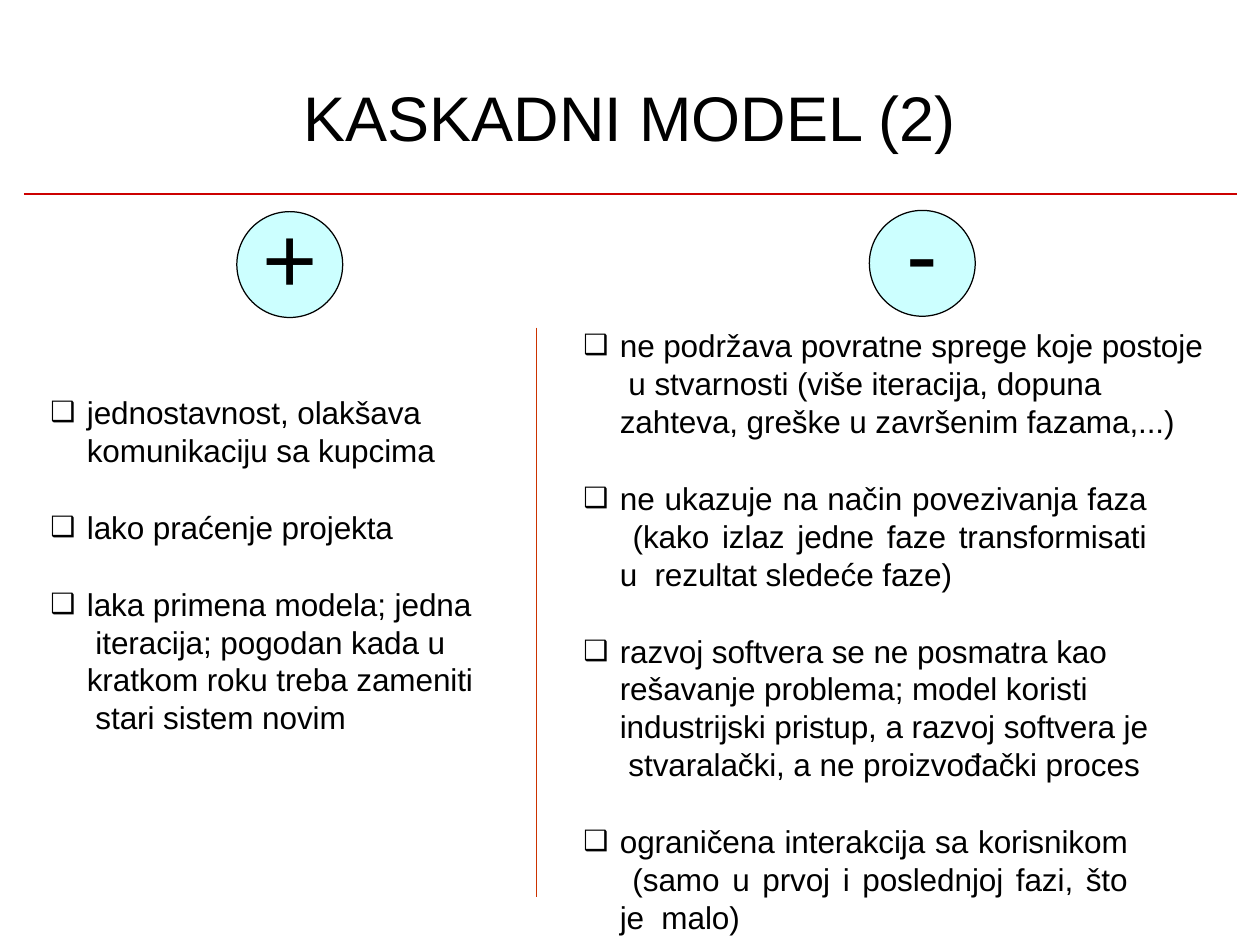
import pptx
import pptx.dml.color
import pptx.enum.shapes
import pptx.enum.text
import pptx.oxml
import pptx.oxml.ns
import pptx.util
from lxml import etree

Inches = pptx.util.Inches
Pt = pptx.util.Pt
ALIGN = pptx.enum.text.PP_ALIGN
ANCHOR = pptx.enum.text.MSO_ANCHOR

COLORS = {"text": "000000", "circle": "CCFFFF", "rule": "CC0000", "divider": "CC3300"}
FONT = "Arial"
CIRCLE_SIZE = 0.84
HANG = 0.29
TEXT_INDENT = 0.31

# Each item: wording, alignment, right margin in inches
ADVANTAGES = [
    ("jednostavnost, olakšava  komunikaciju sa kupcima", ALIGN.LEFT, 0),
    ("lako praćenje projekta", ALIGN.LEFT, 0),
    ("laka primena modela; jedna  iteracija; pogodan kada u  "
     "kratkom roku treba zameniti  stari sistem novim", ALIGN.LEFT, 0),
]
DRAWBACKS = [
    ("ne podržava povratne sprege koje postoje  u stvarnosti (više iteracija, "
     "dopuna  zahteva, greške u završenim fazama,...)", ALIGN.LEFT, 0),
    ("ne ukazuje na način povezivanja faza  (kako izlaz jedne faze "
     "transformisati u  rezultat sledeće faze)", ALIGN.JUSTIFY, 0.48),
    ("razvoj softvera se ne posmatra kao  rešavanje problema; model koristi  "
     "industrijski pristup, a razvoj softvera je  stvaralački, "
     "a ne proizvođački proces", ALIGN.LEFT, 0.44),
    ("ograničena interakcija sa korisnikom  (samo u prvoj i poslednjoj fazi, "
     "što je  malo)", ALIGN.JUSTIFY, 0.63),
]


def color(name):
    return pptx.dml.color.RGBColor.from_string(COLORS[name])


def place(shape, left, top, width, height):
    box = {"left": left, "top": top, "width": width, "height": height}
    for side, value in box.items():
        setattr(shape, side, Inches(value))


def set_frame(frame, anchor, bottom=0):
    settings = {"margin_left": 0, "margin_top": 0, "margin_right": 0,
                "margin_bottom": Inches(bottom), "word_wrap": True,
                "vertical_anchor": anchor}
    for name, value in settings.items():
        setattr(frame, name, value)


def write(paragraph, text, size, align):
    paragraph.alignment = align
    run = paragraph.add_run()
    run.text = text
    for name, value in {"name": FONT, "size": Pt(size)}.items():
        setattr(run.font, name, value)
    run.font.color.rgb = color("text")
    return run


def add_title(slide, text):
    title = slide.shapes.title
    place(title, 0.5, 0.62, 9, 0.61)
    set_frame(title.text_frame, ANCHOR.MIDDLE)
    write(title.text_frame.paragraphs[0], text, 36, ALIGN.CENTER)


def add_line(slide, start, end, color_name):
    line = slide.shapes.add_connector(
        pptx.enum.shapes.MSO_CONNECTOR.STRAIGHT,
        *(Inches(value) for value in start + end))
    line.line.color.rgb = color(color_name)
    line.line.width = Pt(0.72)
    # Empty effect list: no theme shadow
    etree.SubElement(line._element.spPr, pptx.oxml.ns.qn("a:effectLst"))


def add_sign(slide, sign, left, top, lift):
    circle = slide.shapes.add_shape(
        pptx.enum.shapes.MSO_SHAPE.OVAL, Inches(left), Inches(top),
        Inches(CIRCLE_SIZE), Inches(CIRCLE_SIZE))
    circle.shadow.inherit = False
    circle.fill.solid()
    circle.fill.fore_color.rgb = color("circle")
    circle.line.color.rgb = color("text")
    circle.line.width = Pt(0.72)
    # The bottom inset lifts the sign slightly above the middle
    set_frame(circle.text_frame, ANCHOR.MIDDLE, bottom=lift)
    write(circle.text_frame.paragraphs[0], sign, 54, ALIGN.CENTER)


def add_bullet(paragraph, right_margin):
    props = paragraph._p.get_or_add_pPr()
    margins = {"marL": TEXT_INDENT, "indent": -HANG, "marR": right_margin}
    for name, value in margins.items():
        props.set(name, str(int(Inches(value))))
    color_tag = etree.SubElement(props, pptx.oxml.ns.qn("a:buClr"))
    etree.SubElement(color_tag, pptx.oxml.ns.qn("a:srgbClr"), val=COLORS["text"])
    etree.SubElement(props, pptx.oxml.ns.qn("a:buSzPct"), val="89000")
    etree.SubElement(props, pptx.oxml.ns.qn("a:buFont"), typeface=FONT)
    etree.SubElement(props, pptx.oxml.ns.qn("a:buChar"), char="❑")


def add_bullet_list(slide, items, left, top, width, height):
    box = slide.shapes.add_textbox(
        *(Inches(value) for value in (left, top, width, height)))
    frame = box.text_frame
    set_frame(frame, ANCHOR.TOP)
    for index, (text, align, right_margin) in enumerate(items):
        paragraph = frame.add_paragraph() if index else frame.paragraphs[0]
        run = write(paragraph, text, 18, align)
        run._r.get_or_add_rPr().set("spc", "-5")
        paragraph.line_spacing = 1.0
        paragraph.space_before = Pt(22.4 if index else 0)
        add_bullet(paragraph, right_margin)


def main():
    deck = pptx.Presentation()
    deck.slide_width = Inches(10)
    deck.slide_height = Inches(7.5)
    slide = deck.slides.add_slide(deck.slide_layouts[5])

    # Heading and rules
    add_title(slide, "KASKADNI MODEL (2)")
    add_line(slide, (0.19, 1.54), (9.82, 1.54), "rule")
    add_line(slide, (4.26, 2.6), (4.26, 7.12), "divider")

    # Advantages on the left, drawbacks on the right
    add_sign(slide, "+", 1.88, 1.68, 0.14)
    add_bullet_list(slide, ADVANTAGES, 0.38, 3.12, 3.4, 2.76)
    add_sign(slide, "-", 6.9, 1.67, 0.2)
    add_bullet_list(slide, DRAWBACKS, 4.61, 2.59, 4.97, 4.88)

    deck.save("out.pptx")


if __name__ == "__main__":
    main()
